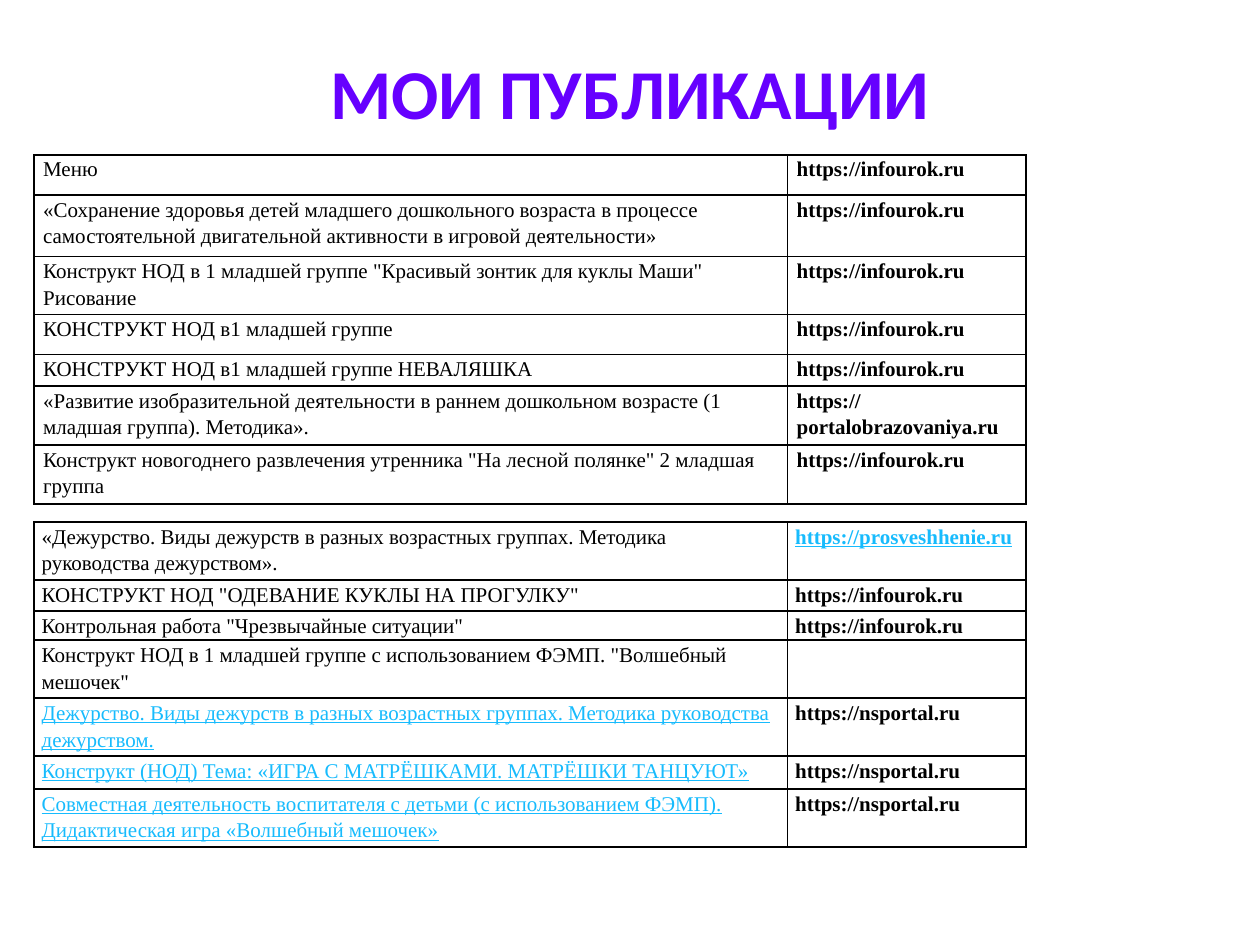
from lxml import etree
from pptx import Presentation
from pptx.dml.color import RGBColor
from pptx.enum import text as t
from pptx.oxml import ns
from pptx.util import Cm, Pt

VIOLET = RGBColor(0x66, 0x00, 0xFF)
BLACK = RGBColor(0x00, 0x00, 0x00)
LINK_BLUE = RGBColor(0x17, 0xBB, 0xFD)

INFOUROK = "https://infourok.ru"
NSPORTAL = "https://nsportal.ru"
COLUMN_WIDTHS = (15.19, 4.8)

# Each row: height in cm, publication, site, and the columns set as links
EARLIER_WORKS = [
    (0.81, "Меню", INFOUROK, ()),
    (1.24, "«Сохранение здоровья детей младшего дошкольного возраста в процессе "
           "самостоятельной двигательной активности в игровой деятельности»", INFOUROK, ()),
    (1.14, 'Конструкт НОД в 1 младшей группе "Красивый зонтик для куклы Маши" Рисование',
     INFOUROK, ()),
    (0.81, "КОНСТРУКТ НОД в1 младшей группе", INFOUROK, ()),
    (0.63, "КОНСТРУКТ НОД в1 младшей группе НЕВАЛЯШКА", INFOUROK, ()),
    (1.19, "«Развитие изобразительной деятельности в раннем дошкольном возрасте "
           "(1 младшая группа). Методика».", "https://portalobrazovaniya.ru", ()),
    (1.19, 'Конструкт новогоднего развлечения утренника "На лесной полянке" 2 младшая группа',
     INFOUROK, ()),
]
LATER_WORKS = [
    (1.17, "«Дежурство. Виды дежурств в разных возрастных группах. "
           "Методика руководства дежурством».", "https://prosveshhenie.ru", (1,)),
    (0.63, 'КОНСТРУКТ НОД "ОДЕВАНИЕ КУКЛЫ НА ПРОГУЛКУ"', INFOUROK, ()),
    (0.54, 'Контрольная работа "Чрезвычайные ситуации"', INFOUROK, ()),
    (1.08, 'Конструкт НОД в 1 младшей группе с использованием ФЭМП. "Волшебный мешочек"',
     "", ()),
    (1.08, "Дежурство. Виды дежурств в разных возрастных группах. "
           "Методика руководства дежурством.", NSPORTAL, (0,)),
    (0.66, "Конструкт (НОД) Тема: «ИГРА С МАТРЁШКАМИ. МАТРЁШКИ ТАНЦУЮТ»", NSPORTAL, (0,)),
    (1.08, "Совместная деятельность воспитателя с детьми (с использованием ФЭМП). "
           "Дидактическая игра «Волшебный мешочек»", NSPORTAL, (0,)),
]


def write(frame, wording, font="Times New Roman", size=12, color=BLACK, bold=False,
          underline=False, align=t.PP_ALIGN.LEFT, spacing=1.15):
    paragraph = frame.paragraphs[0]
    paragraph.alignment = align
    paragraph.line_spacing = spacing
    paragraph.font.size = Pt(size)
    run = paragraph.add_run()
    run.text = wording
    run.font.name = font
    run.font.size = Pt(size)
    run.font.bold = bold
    run.font.underline = underline
    run.font.color.rgb = color


def outline(cell):
    """Give the cell no fill and a thin black border on all four sides."""
    properties = cell._tc.get_or_add_tcPr()
    for side in ("lnL", "lnR", "lnT", "lnB"):
        border = etree.SubElement(properties, ns.qn(f"a:{side}"), w=str(Pt(1)))
        solid = etree.SubElement(border, ns.qn("a:solidFill"))
        etree.SubElement(solid, ns.qn("a:srgbClr"), val=str(BLACK))
    cell.fill.background()


deck = Presentation()
deck.slide_width, deck.slide_height = Cm(25.4), Cm(19.05)
slide = deck.slides.add_slide(deck.slide_layouts[6])

heading = slide.shapes.add_textbox(Cm(1.27), Cm(0.76), Cm(22.86), Cm(2.16)).text_frame
heading.word_wrap = True
heading.vertical_anchor = t.MSO_ANCHOR.MIDDLE
write(heading, "МОИ ПУБЛИКАЦИИ", font="Calibri", size=40, color=VIOLET, bold=True,
      align=t.PP_ALIGN.CENTER, spacing=1.0)

for top, side_margin, works in ((3.12, 0.18, EARLIER_WORKS), (10.52, 0.15, LATER_WORKS)):
    total_height = sum(work[0] for work in works)
    publications = slide.shapes.add_table(
        len(works), len(COLUMN_WIDTHS), Cm(0.69), Cm(top),
        Cm(sum(COLUMN_WIDTHS)), Cm(total_height)).table
    publications.first_row = False
    publications.horz_banding = False
    for column, width in zip(publications.columns, COLUMN_WIDTHS):
        column.width = Cm(width)
    for row, (height, publication, site, links) in zip(publications.rows, works):
        row.height = Cm(height)
        for index, wording in enumerate((publication, site)):
            cell = row.cells[index]
            cell.margin_left = cell.margin_right = Cm(side_margin)
            cell.margin_top = cell.margin_bottom = 0
            outline(cell)
            is_link = index in links
            write(cell.text_frame, wording, color=LINK_BLUE if is_link else BLACK,
                  bold=index == 1, underline=is_link)

deck.save("out.pptx")
